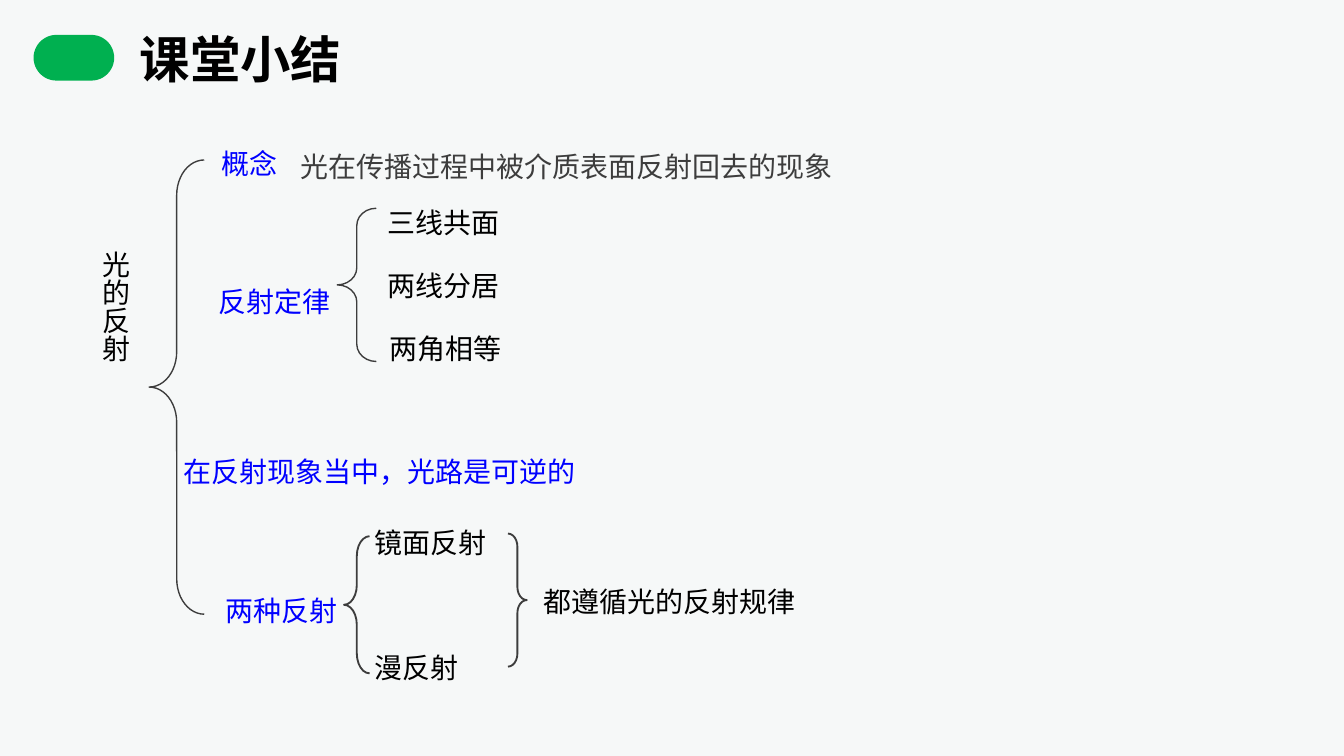
"""Builds the lesson summary slide on the reflection of light."""
from pptx import Presentation
from pptx.dml.color import RGBColor
from pptx.enum.lang import MSO_LANGUAGE_ID as Language
from pptx.enum.shapes import MSO_SHAPE as Shape
from pptx.enum.text import MSO_ANCHOR as Anchor, MSO_AUTO_SIZE as AutoSize, PP_ALIGN as Align
from pptx.util import Inches, Pt

THEME = {
    "font": "Arial", "title_size": 27, "body_size": 15,
    "background": "F6F8F8", "accent": "00B050", "brace": "3D3D3D",
    "text": "000000", "topic": "0000FF", "detail": "3D3D3D",
}
SLIDE_WIDTH = 10
SLIDE_HEIGHT = SLIDE_WIDTH * 9 / 16
NARROW = (0.07, 0.04)
NORMAL = (0.1, 0.05)

TITLE = ("课堂小结", (0.97, 0.17, 4.62, 0.53))
BADGE = (0.25, 0.26, 0.6, 0.34)
ROOT = ("光的反射", (0.58, 1.77, 0.45, 2.03))

LABELS = [
    ("概念", (1.11, 1.05, 1.5, 0.33), "topic", NARROW, 1),
    ("光在传播过程中被介质表面反射回去的现象", (0.92, 0.95, 6.59, 0.45), "detail", NARROW, 1.5),
    ("反射定律", (1.16, 2.07, 1.76, 0.35), "topic", NORMAL, 1),
    ("在反射现象当中，光路是可逆的", (0.45, 3.34, 4.75, 0.33), "topic", NARROW, 1),
    ("两种反射", (1.2, 4.38, 1.79, 0.33), "topic", NARROW, 1),
    ("镜面反射", (2.29, 3.86, 1.83, 0.35), "text", NORMAL, 1),
    ("漫反射", (2.38, 4.79, 1.44, 0.35), "text", NORMAL, 1),
    ("都遵循光的反射规律", (3.21, 4.3, 3.54, 0.35), "text", NORMAL, 1),
]
LAWS = [("三线共面", 2.02), ("两线分居", 2.02), ("两角相等", 2.05)]
LAW_LEFT, LAW_TOP, LAW_STEP, LAW_HEIGHT = 2.29, 1.48, 0.47, 0.35

BRACES = [
    (Shape.LEFT_BRACE, (1.11, 1.19, 0.41, 3.38), 0.64, 0.75),
    (Shape.LEFT_BRACE, (2.51, 1.55, 0.29, 1.14), 0.44, 0.75),
    (Shape.LEFT_BRACE, (2.56, 3.99, 0.19, 1.02), 0.78, 1),
    (Shape.RIGHT_BRACE, (3.78, 3.97, 0.14, 0.99), 0.69, 1),
]


def color(name):
    return RGBColor.from_string(THEME[name])


def inches(values):
    return [Inches(value) for value in values]


def set_values(target, values):
    for name, value in values.items():
        setattr(target, name, value)


def write(box, text, ink="text", insets=NORMAL, spacing=1, size="body_size",
          bold=False, align=Align.CENTER):
    side, edge = inches(insets)
    frame = box.text_frame
    set_values(frame, {
        "margin_left": side, "margin_right": side, "margin_top": edge,
        "margin_bottom": edge, "word_wrap": True,
        "vertical_anchor": Anchor.TOP, "auto_size": AutoSize.NONE,
    })
    para = frame.paragraphs[0]
    set_values(para, {"alignment": align, "line_spacing": spacing})
    span = para.add_run()
    span.text = text
    set_values(span.font, {
        "name": THEME["font"], "size": Pt(THEME[size]), "bold": bold,
        "language_id": Language.SIMPLIFIED_CHINESE,
    })
    span.font.color.rgb = color(ink)


def add_label(slide, text, place, *style):
    box = slide.shapes.add_textbox(*inches(place))
    write(box, text, *style)
    return box


def add_shape(slide, kind, place, adjustment):
    shape = slide.shapes.add_shape(kind, *inches(place))
    shape.shadow.inherit = False
    shape.adjustments[0] = adjustment
    return shape


def add_brace(slide, kind, place, curve, weight):
    brace = add_shape(slide, kind, place, curve)
    brace.fill.background()
    brace.line.color.rgb = color("brace")
    brace.line.width = Pt(weight)


def add_title(slide):
    text, place = TITLE
    title = slide.shapes.title
    set_values(title, dict(zip(("left", "top", "width", "height"), inches(place))))
    write(title, text, insets=NARROW, size="title_size", bold=True, align=Align.LEFT)


def main():
    deck = Presentation()
    deck.slide_width, deck.slide_height = inches((SLIDE_WIDTH, SLIDE_HEIGHT))
    slide = deck.slides.add_slide(deck.slide_layouts[5])
    slide.background.fill.solid()
    slide.background.fill.fore_color.rgb = color("background")

    badge = add_shape(slide, Shape.ROUNDED_RECTANGLE, BADGE, 0.5)
    badge.fill.solid()
    badge.fill.fore_color.rgb = color("accent")
    badge.line.fill.background()
    add_title(slide)

    for brace in BRACES:
        add_brace(slide, *brace)
    root = add_label(slide, *ROOT)
    root.text_frame._txBody.bodyPr.set("vert", "eaVert")
    for label in LABELS:
        add_label(slide, *label)
    for row, (law, width) in enumerate(LAWS):
        add_label(slide, law, (LAW_LEFT, LAW_TOP + row * LAW_STEP, width, LAW_HEIGHT))

    deck.save("out.pptx")


if __name__ == "__main__":
    main()
